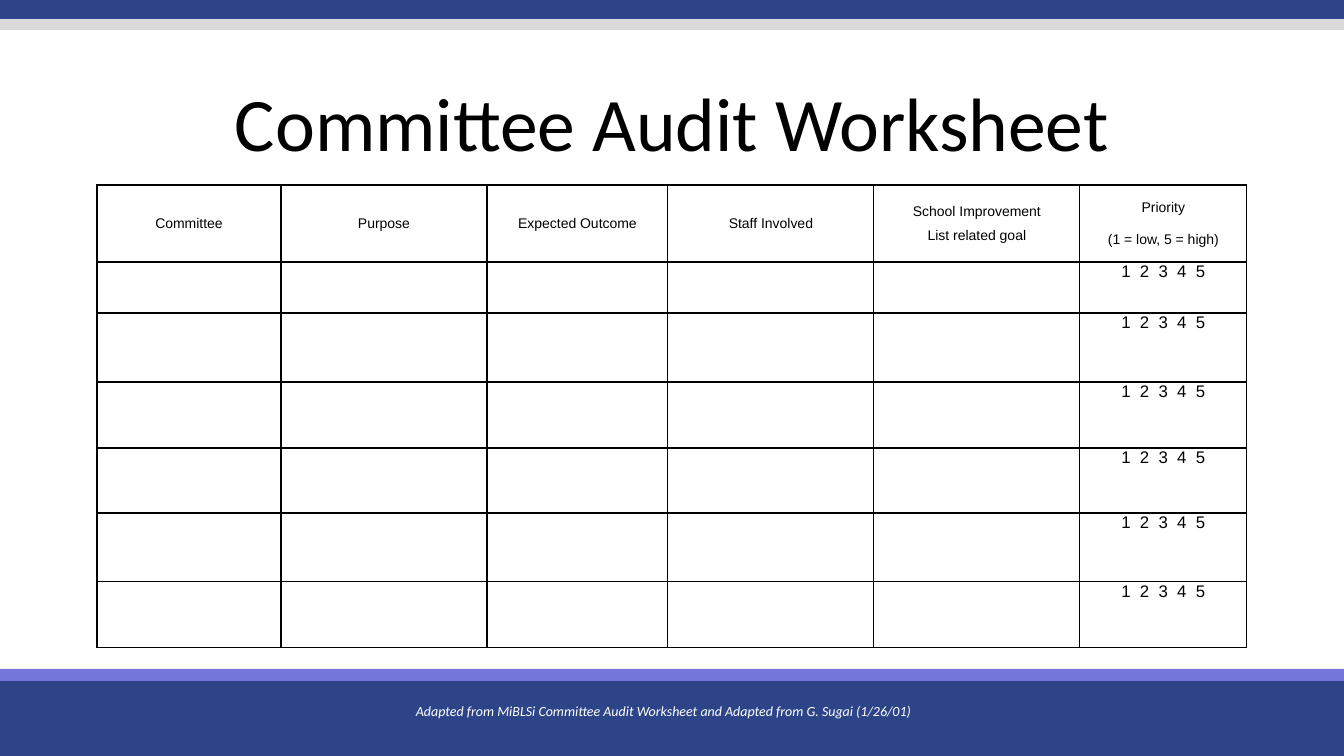
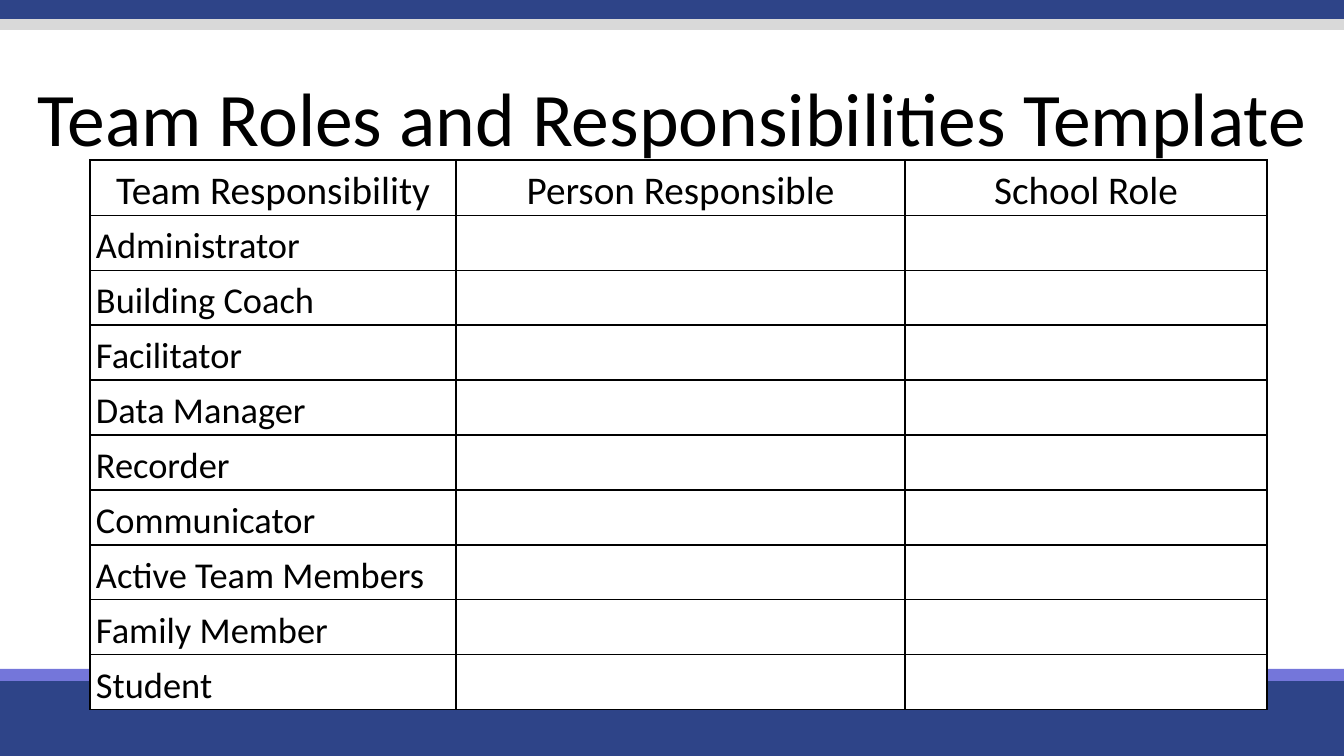
import pptx
import pptx.util
import pptx.dml.color
import pptx.enum.shapes
import pptx.enum.text
import pptx.oxml
import pptx.oxml.ns

Pt = pptx.util.Pt
ALIGN = pptx.enum.text.PP_ALIGN
ANCHOR = pptx.enum.text.MSO_ANCHOR

# Shared look
SCALE = 914400 / 100.8
WIDTH, HEIGHT = 1344, 756
COLORS = {
    "navy": "2E4488",
    "violet": "7476DA",
    "grey": "D9D9D9",
    "white": "FFFFFF",
    "black": "000000",
}
BANDS = [  # top, height, colour
    (675, 81, "navy"),
    (669, 12, "violet"),
    (-3, 22, "navy"),
    (19, 11, "grey"),
]

# Slide content
AUDIT_HEAD = [
    ["Committee"],
    ["Purpose"],
    ["Expected Outcome"],
    ["Staff Involved"],
    ["School Improvement", "List related goal"],
    ["Priority", "(1 = low, 5 = high)"],
]
AUDIT_COLS = [184, 206, 181, 206, 206, 167]
AUDIT_ROWS = [77, 51, 69, 66, 65, 69, 66]
RATING = "1 2 3 4 5"
ROLE_HEAD = ["Team Responsibility", "Person Responsible", "School Role"]
ROLE_COLS = [366, 449, 362]
ROLES = [
    "Administrator", "Building Coach", "Facilitator", "Data Manager",
    "Recorder", "Communicator", "Active Team Members", "Family Member",
    "Student",
]


def px(n):
    return pptx.util.Emu(round(n * SCALE))


def color(name):
    return pptx.dml.color.RGBColor.from_string(COLORS[name])


def style(para, size, face="Calibri", tint="black", align=ALIGN.LEFT):
    para.alignment = align
    para.font.size = Pt(size)
    para.font.name = face
    para.font.color.rgb = color(tint)


def add_bands(slide, master):
    """Draw the bands and move them behind everything on the master."""
    for spot, (top, height, tint) in enumerate(BANDS, 2):
        band = slide.shapes.add_shape(
            pptx.enum.shapes.MSO_SHAPE.RECTANGLE,
            px(0), px(top), px(WIDTH), px(height))
        band.shadow.inherit = False
        band.fill.solid()
        band.fill.fore_color.rgb = color(tint)
        band.line.fill.background()
        master.shapes.element.insert(spot, band.element)


def set_title(slide, text, top, height):
    title = slide.shapes.title
    title.left, title.top = px(0), px(top)
    title.width, title.height = px(WIDTH), px(height)
    frame = title.text_frame
    frame.text = text
    frame.auto_size = pptx.enum.text.MSO_AUTO_SIZE.NONE
    frame.vertical_anchor = ANCHOR.MIDDLE
    para = frame.paragraphs[0]
    para.line_spacing = 0.9
    style(para, 54, align=ALIGN.CENTER)


def add_note(slide, text, left, top, width, height):
    box = slide.shapes.add_textbox(px(left), px(top), px(width), px(height))
    box.text_frame.word_wrap = True
    box.text_frame.text = text
    para = box.text_frame.paragraphs[0]
    style(para, 10, tint="white")
    para.font.italic = True


def add_edges(cell):
    props = cell._tc.get_or_add_tcPr()
    for side in ("lnL", "lnR", "lnT", "lnB"):
        props.append(pptx.oxml.parse_xml(
            f'<a:{side} {pptx.oxml.ns.nsdecls("a")} w="12700">'
            f'<a:solidFill><a:srgbClr val="{COLORS["black"]}"/></a:solidFill>'
            f'</a:{side}>'))


def add_grid(slide, left, top, cols, rows, inset, tint=None):
    """Add a plain table with black edges and an optional cell fill."""
    table = slide.shapes.add_table(
        len(rows), len(cols), px(left), px(top),
        px(sum(cols)), px(sum(rows))).table
    table.first_row = table.horz_banding = False
    for col, width in zip(table.columns, cols):
        col.width = px(width)
    for row, height in zip(table.rows, rows):
        row.height = px(height)
    for cell in table.iter_cells():
        cell.margin_left = cell.margin_right = px(inset)
        cell.margin_top = cell.margin_bottom = 0
        add_edges(cell)
        if tint:
            cell.fill.solid()
            cell.fill.fore_color.rgb = color(tint)
        else:
            cell.fill.background()
    return table


def fill_audit(table):
    for col, lines in enumerate(AUDIT_HEAD):
        cell = table.cell(0, col)
        cell.vertical_anchor = ANCHOR.MIDDLE
        cell.text = "\n".join(lines)
        for para in cell.text_frame.paragraphs:
            para.space_after = Pt(6)
            style(para, 10, "Arial", align=ALIGN.CENTER)
    # The last heading is set wider apart
    for para in cell.text_frame.paragraphs[1:]:
        para.space_before = Pt(6)
    for row in range(1, len(AUDIT_ROWS)):
        cell = table.cell(row, len(AUDIT_COLS) - 1)
        cell.text = RATING
        para = cell.text_frame.paragraphs[0]
        para.space_after = Pt(6)
        style(para, 12, "Arial", align=ALIGN.CENTER)
        # Letter spacing parts the digits
        para.runs[0]._r.get_or_add_rPr().set("spc", "167")


def fill_roles(table):
    heads = [(0, col, text, 28, ALIGN.CENTER, ANCHOR.TOP)
             for col, text in enumerate(ROLE_HEAD)]
    names = [(row, 0, text, 26, ALIGN.LEFT, ANCHOR.MIDDLE)
             for row, text in enumerate(ROLES, 1)]
    for row, col, text, size, align, anchor in heads + names:
        cell = table.cell(row, col)
        cell.text = text
        cell.vertical_anchor = anchor
        para = cell.text_frame.paragraphs[0]
        para.line_spacing = 1.15
        style(para, size, align=align)


def main():
    deck = pptx.Presentation()
    deck.slide_width, deck.slide_height = px(WIDTH), px(HEIGHT)
    layout = deck.slide_layouts.get_by_name("Title Only")

    # Committee audit
    audit = deck.slides.add_slide(layout)
    add_bands(audit, deck.slide_master)
    set_title(audit, "Committee Audit Worksheet", 82, 91)
    fill_audit(add_grid(audit, 97, 185, AUDIT_COLS, AUDIT_ROWS, 7))
    add_note(audit, "Adapted from MiBLSi Committee Audit Worksheet and "
             "Adapted from G. Sugai (1/26/01)", 406, 698, 530, 27)

    # Team roles
    team = deck.slides.add_slide(layout)
    set_title(team, "Team Roles and Responsibilities Template", 78, 89)
    rows = [55] * (len(ROLES) + 1)
    fill_roles(add_grid(team, 90, 160, ROLE_COLS, rows, 6, "white"))

    deck.save("out.pptx")


if __name__ == "__main__":
    main()
